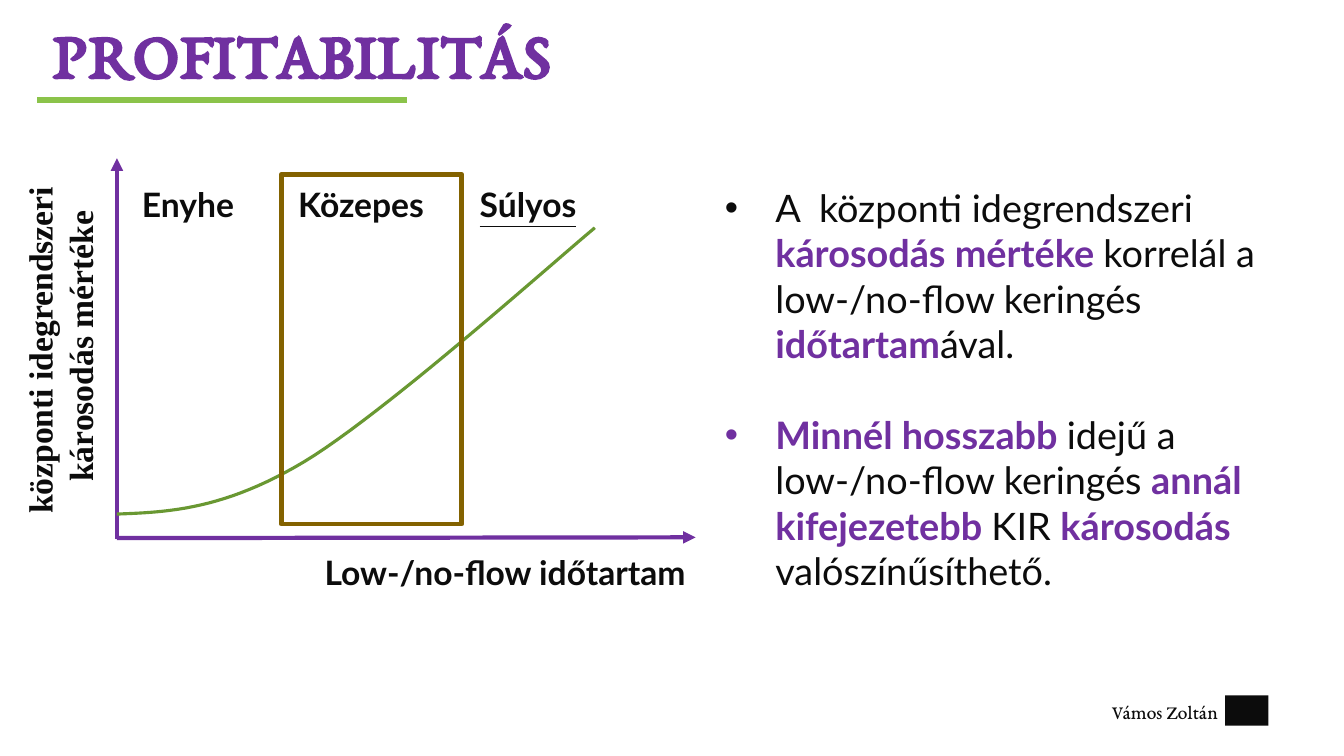
from dataclasses import dataclass

from lxml.etree import SubElement
from pptx import Presentation
from pptx.dml.color import RGBColor
from pptx.enum.shapes import MSO_CONNECTOR, MSO_SHAPE
from pptx.enum.text import MSO_ANCHOR as ANCHOR, MSO_AUTO_SIZE as AUTO, PP_ALIGN as ALIGN
from pptx.oxml.ns import qn
from pptx.util import Inches, Pt

PURPLE = RGBColor(0x70, 0x30, 0xA0)
INK = RGBColor(0x0C, 0x0C, 0x0C)
LIME = RGBColor(0x8B, 0xC3, 0x4A)
CURVE_GREEN = RGBColor(0x69, 0x98, 0x32)
BROWN = RGBColor(0x83, 0x62, 0x00)

SERIF, SANS, AXIS_SERIF = "EB Garamond", "Lato", "Times New Roman"
LABEL = {"name": SANS, "size": Pt(24), "bold": True}


@dataclass
class Box:
    """A region whose areas are given in percent of its own size."""
    left: int
    top: int
    width: int
    height: int

    def point(self, x, y):
        return (round(self.left + self.width * x / 100),
                round(self.top + self.height * y / 100))

    def area(self, x, y, w, h):
        return Box(*self.point(x, y), round(self.width * w / 100),
                   round(self.height * h / 100))

    def rect(self):
        return self.left, self.top, self.width, self.height


SLIDE = Box(0, 0, Inches(13.33), Inches(7.5))


def add_run(paragraph, words, color, formats):
    run = paragraph.add_run()
    run.text = words
    for key, value in formats.items():
        setattr(run.font, key, value)
    run.font.color.rgb = color


def add_label(slide, box, lines, formats, align=ALIGN.LEFT):
    label = slide.shapes.add_textbox(*box.rect())
    frame = label.text_frame
    frame.word_wrap = True
    for number, words in enumerate(lines):
        paragraph = frame.add_paragraph() if number else frame.paragraphs[0]
        paragraph.alignment = align
        add_run(paragraph, words, INK, formats)
    return label


def add_line(slide, start, end, color, width, arrow=False):
    line = slide.shapes.add_connector(MSO_CONNECTOR.STRAIGHT, *start, *end)
    line.line.color.rgb = color
    line.line.width = Pt(width)
    properties = line._element.spPr
    if arrow:
        SubElement(properties.find(qn("a:ln")), qn("a:tailEnd"), type="triangle")
    SubElement(properties, qn("a:effectLst"))


def place(placeholder, box, anchor):
    for side, value in zip(("left", "top", "width", "height"), box.rect()):
        setattr(placeholder, side, value)
    frame = placeholder.text_frame
    frame.auto_size = AUTO.NONE
    frame.word_wrap = True
    frame.vertical_anchor = anchor
    return frame


def heading(slide, box):
    frame = place(slide.shapes.title, box.area(3.15, 0, 47.64, 100), ANCHOR.BOTTOM)
    frame.margin_bottom = Inches(0.08)
    paragraph = frame.paragraphs[0]
    paragraph.alignment = ALIGN.LEFT
    paragraph.line_spacing = 0.9
    add_run(paragraph, "PROFITABILITÁS", PURPLE,
            {"name": SERIF, "size": Pt(48), "bold": True})
    # Rule below the title
    add_line(slide, box.point(2.78, 99), box.point(30.31, 99), LIME, 4)


def bezier(p0, p1, p2, p3, steps=24):
    for step in range(1, steps + 1):
        t = step / steps
        u = 1 - t
        yield tuple(u**3 * a + 3 * u * u * t * b + 3 * u * t * t * c + t**3 * d
                    for a, b, c, d in zip(p0, p1, p2, p3))


def damage_graph(slide, box):
    # Vertical axis and the axis titles
    add_line(slide, box.point(0, 100), box.point(0, 0), PURPLE, 3, arrow=True)
    damage = add_label(slide, box.area(-41.81, 37.3, 63.94, 24.07),
                       ["központi idegrendszeri ", "károsodás mértéke"],
                       {**LABEL, "name": AXIS_SERIF}, ALIGN.CENTER)
    damage.rotation = 270
    add_label(slide, box.area(34.15, 102.12, 75.44, 13.23),
              ["Low-/no-flow időtartam"], LABEL)

    # Rising curve
    knots = [(0, 93.4), (9.23, 92.9), (18.64, 92.1), (32.4, 79.63),
             (46.17, 66.93), (73.87, 29.37), (82.58, 18.25)]
    points = [box.point(*p) for first in (0, 3)
              for p in bezier(*knots[first:first + 4])]
    builder = slide.shapes.build_freeform(*box.point(*knots[0]))
    builder.add_line_segments(points, close=False)
    curve = builder.convert_to_shape()

    # Frame around the middle band
    middle = slide.shapes.add_shape(MSO_SHAPE.RECTANGLE,
                                    *box.area(28.4, 4.23, 31.18, 91.8).rect())
    for outline, color, width in ((curve, CURVE_GREEN, 2.25), (middle, BROWN, 3.5)):
        outline.shadow.inherit = False
        outline.fill.background()
        outline.line.color.rgb = color
        outline.line.width = Pt(width)

    # Severity bands
    for words, x, width, underline in (("Enyhe", 2.61, 22.65, False),
                                       ("Közepes", 29.62, 29.44, False),
                                       ("Súlyos", 60.98, 22.65, True)):
        add_label(slide, box.area(x, 5.56, width, 13.23), [words],
                  {**LABEL, "underline": underline})

    # Horizontal axis
    add_line(slide, box.point(0, 99.7), box.point(100, 99.5), PURPLE, 3, arrow=True)


def findings(slide, box):
    # Each item is a list of (words, highlighted) runs
    items = [
        [("A  központi idegrendszeri ", False), ("károsodás mértéke ", True),
         ("korrelál a low-/no-flow keringés ", False), ("időtartam", True),
         ("ával.", False)],
        [("Minnél hosszabb ", True), ("idejű a low-/no-flow keringés ", False),
         ("annál kifejezetebb ", True), ("KIR ", False), ("károsodás", True),
         (" valószínűsíthető.", False)],
    ]
    frame = place(slide.placeholders[1], box, ANCHOR.TOP)
    for number, item in enumerate(items):
        paragraph = frame.add_paragraph() if number else frame.paragraphs[0]
        paragraph.space_before = Pt(32.4 * number)
        properties = paragraph._p.get_or_add_pPr()
        properties.set("marL", str(Inches(0.5)))
        properties.set("indent", str(-Inches(0.5)))
        SubElement(properties, qn("a:buChar"), char="•")
        for words, highlighted in item:
            add_run(paragraph, words, PURPLE if highlighted else INK,
                    {"name": SANS, "size": Pt(27), "bold": highlighted})


def byline(slide, box):
    author = add_label(slide, box.area(0, 0, 86.72, 93), ["Vámos Zoltán"],
                       {"name": SERIF, "size": Pt(14)}, ALIGN.RIGHT)
    author.text_frame.margin_top = Inches(0.04)
    author.text_frame.margin_bottom = 0
    # Plain mark beside the name
    mark = slide.shapes.add_shape(MSO_SHAPE.RECTANGLE,
                                  *box.area(85.8, 0, 14.2, 100).rect())
    mark.shadow.inherit = False
    mark.fill.solid()
    mark.fill.fore_color.rgb = INK
    mark.line.fill.background()


def main():
    deck = Presentation()
    deck.slide_width, deck.slide_height = SLIDE.width, SLIDE.height
    slide = deck.slides.add_slide(deck.slide_layouts[1])
    heading(slide, SLIDE.area(0, 0, 100, 13.33))
    damage_graph(slide, SLIDE.area(8.7, 20.93, 43.06, 50.4))
    findings(slide, SLIDE.area(53.19, 23.73, 45.91, 55.87))
    byline(slide, SLIDE.area(71.72, 92, 22.66, 4))
    deck.save("out.pptx")


if __name__ == "__main__":
    main()
